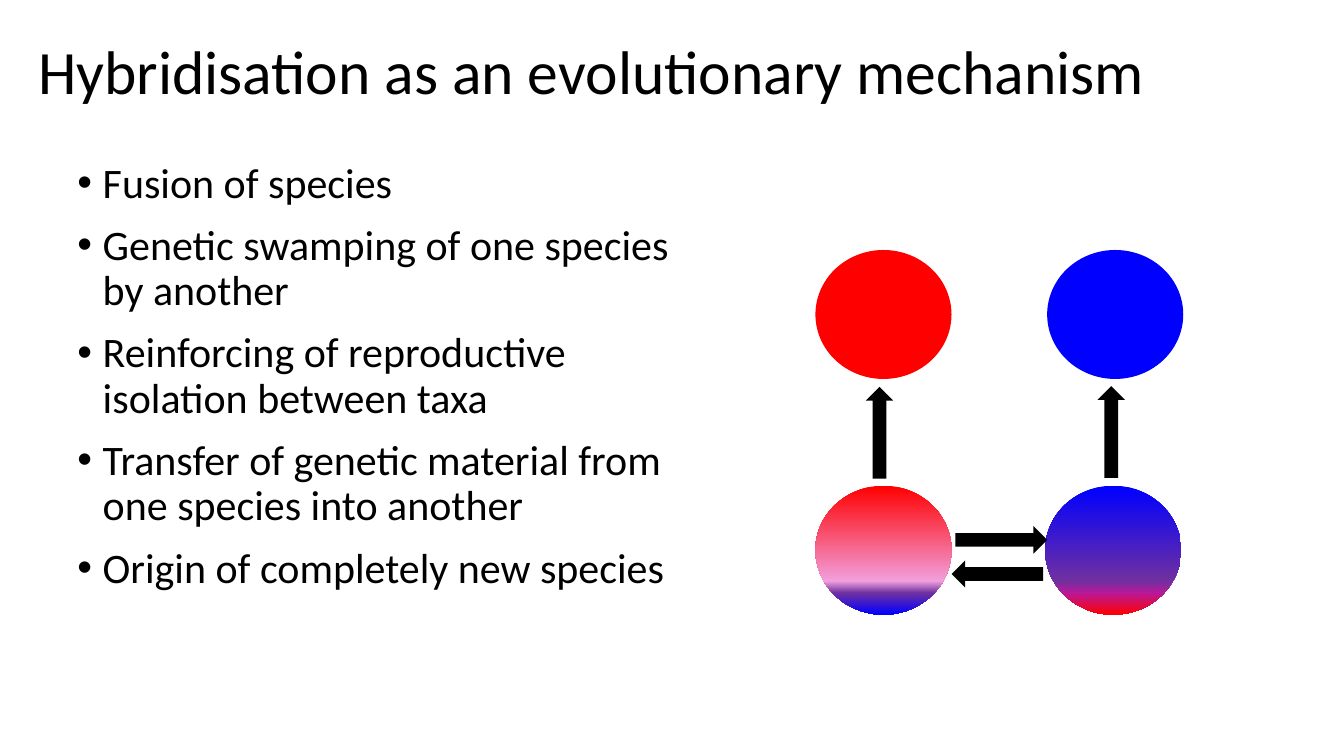
from lxml import etree
from pptx import Presentation
from pptx.dml.color import RGBColor
from pptx.enum import shapes, text
from pptx.oxml import ns
from pptx.util import Cm, Pt

BLACK = RGBColor(0, 0, 0)
RED = RGBColor(0xFF, 0, 0)
BLUE = RGBColor(0, 0, 0xFF)
PINK = RGBColor(0xF1, 0x9F, 0xDC)
PURPLE = RGBColor(0x70, 0x30, 0xA0)
PLUM = RGBColor(0xB8, 0x18, 0x9A)

TITLE = "Hybridisation as an evolutionary mechanism"
POINTS = [
    "Fusion of species",
    "Genetic swamping of one species by another",
    "Reinforcing of reproductive isolation between taxa",
    "Transfer of genetic material from one species into another",
    "Origin of completely new species",
]

# Lengths in cm; blends are (percent, colour) from top to bottom
DISC = (3.43, 3.25)
DISCS = [
    (20.55, 12.24, [(0, RED), (74, PINK), (83, PURPLE), (100, BLUE)]),
    (26.34, 12.24, [(0, BLUE), (74, PURPLE), (83, PLUM), (100, RED)]),
    (20.55, 6.3, RED),
    (26.39, 6.3, BLUE),
]
LONG, THICK = 2.31, 0.69
KIND = shapes.MSO_SHAPE
ARROWS = [
    (KIND.RIGHT_ARROW, 24.08, 13.26),
    (KIND.LEFT_ARROW, 23.98, 14.12),
    (KIND.UP_ARROW, 21.82, 9.75),
    (KIND.UP_ARROW, 27.66, 9.73),
]


def add_text(slide, lines, box, size, anchor=text.MSO_ANCHOR.TOP,
             after=0, bullet=None, indent=0.64):
    frame = slide.shapes.add_textbox(*map(Cm, box)).text_frame
    frame.word_wrap = True
    frame.vertical_anchor = anchor
    for i, line in enumerate(lines):
        para = frame.paragraphs[0] if i == 0 else frame.add_paragraph()
        para.text = line
        para.line_spacing = 0.9
        para.space_after = Pt(after)
        if bullet:
            props = para._p.get_or_add_pPr()
            props.set("marL", str(Cm(indent)))
            props.set("indent", str(-Cm(indent)))
            font = etree.SubElement(props, ns.qn("a:buFont"))
            font.set("typeface", "Arial")
            etree.SubElement(props, ns.qn("a:buChar")).set("char", bullet)
        para.font.name = "Calibri"
        para.font.size = Pt(size)
        para.font.color.rgb = BLACK


def blend(shape, stops):
    """Fill the shape with a vertical gradient."""
    shape.fill.gradient()
    grad = shape._element.spPr.find(ns.qn("a:gradFill"))
    for child in list(grad):
        grad.remove(child)
    group = etree.SubElement(grad, ns.qn("a:gsLst"))
    for place, color in stops:
        stop = etree.SubElement(group, ns.qn("a:gs"), pos=str(place * 1000))
        etree.SubElement(stop, ns.qn("a:srgbClr"), val=str(color))
    etree.SubElement(grad, ns.qn("a:lin"), ang="5400000", scaled="0")


def add_shape(slide, kind, box, fill):
    shape = slide.shapes.add_shape(kind, *map(Cm, box))
    shape.shadow.inherit = False
    shape.line.fill.background()
    if isinstance(fill, list):
        blend(shape, fill)
    else:
        shape.fill.solid()
        shape.fill.fore_color.rgb = fill


def main():
    deck = Presentation()
    deck.slide_width, deck.slide_height = Cm(33.87), Cm(19.05)
    slide = deck.slides.add_slide(deck.slide_layouts[6])
    add_text(slide, [TITLE], (0.71, 0.05, 29.21, 3.68), 44,
             anchor=text.MSO_ANCHOR.MIDDLE)
    add_text(slide, POINTS, (1.7, 3.96, 16.33, 14.25), 30,
             after=12, bullet="•")
    for left, top, fill in DISCS:
        add_shape(slide, KIND.OVAL, (left, top, *DISC), fill)
    for kind, left, top in ARROWS:
        size = (THICK, LONG) if kind == KIND.UP_ARROW else (LONG, THICK)
        add_shape(slide, kind, (left, top, *size), BLACK)
    deck.save("out.pptx")


if __name__ == "__main__":
    main()
